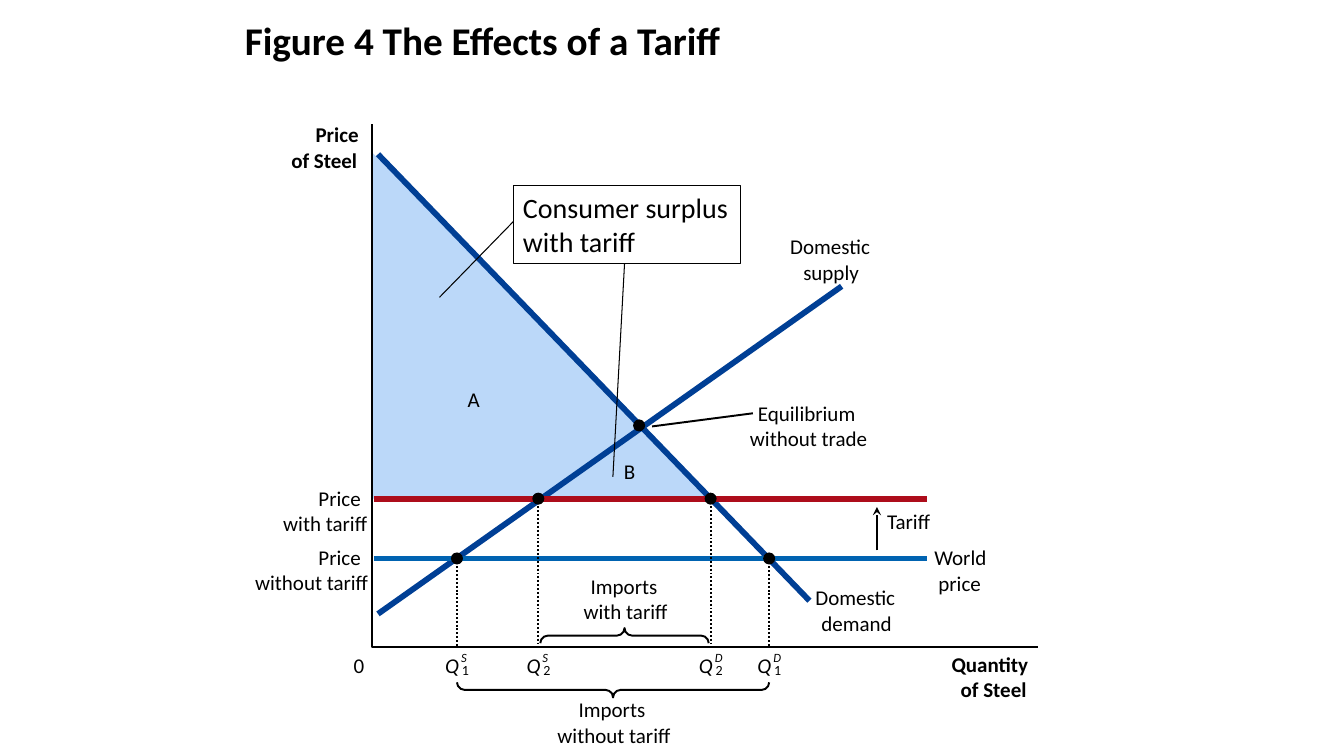
import dataclasses

import lxml.etree
import pptx
import pptx.dml.color
import pptx.enum.dml
import pptx.enum.shapes
import pptx.enum.text
import pptx.oxml.ns
import pptx.util

Pt = pptx.util.Pt
SHAPES = pptx.enum.shapes.MSO_SHAPE


@dataclasses.dataclass(frozen=True)
class Theme:
    """Colours, type sizes and line widths of the page."""

    font: str = "Calibri"
    ink: str = "000000"
    paper: str = "FFFFFF"
    surplus: str = "BBD8F9"
    curve: str = "003F95"
    tariff: str = "AD0D1B"
    world: str = "0063B1"
    title: float = 28
    callout: float = 20
    label: float = 15
    subscript: float = 10
    superscript: float = 9
    hairline: float = 0.75
    thin: float = 1.38
    thick: float = 4.13


THEME = Theme()
TARIFF_PRICE, WORLD_PRICE, AXIS_LEVEL = 356.2, 398.9, 462.2
SUPPLY_WORLD, SUPPLY_TARIFF, DEMAND_TARIFF, DEMAND_WORLD = 326.4, 384.5, 507.6, 549.4
EQUILIBRIUM = (456.5, 303.9)
LINE_PITCH = 18.3


def colour(code):
    """Turn a hex code into a colour."""
    return pptx.dml.color.RGBColor.from_string(code)


def style_text(box, size, bold=False, italic=False):
    """Give every run of a box its font."""
    for para in box.text_frame.paragraphs:
        for span in para.runs:
            span.font.name = THEME.font
            span.font.size = Pt(size)
            span.font.bold = bold
            span.font.italic = italic
            span.font.color.rgb = colour(THEME.ink)


def paint(shape, fill=None, width=None):
    """Set the fill and outline of a shape, and drop its shadow."""
    shape.shadow.inherit = False
    if fill:
        shape.fill.solid()
        shape.fill.fore_color.rgb = colour(fill)
    else:
        shape.fill.background()
    if width:
        shape.line.color.rgb = colour(THEME.ink)
        shape.line.width = Pt(width)
    else:
        shape.line.fill.background()


def add_label(page, text, left, top, width, size=THEME.label, **weight):
    """Place one line of text without margins."""
    box = page.shapes.add_textbox(Pt(left), Pt(top), Pt(width), Pt(size * 1.22))
    frame = box.text_frame
    frame.margin_left = frame.margin_right = frame.margin_top = frame.margin_bottom = 0
    frame.word_wrap = False
    frame.text = text
    style_text(box, size, **weight)


def add_stack(page, top, *lines, **weight):
    """Place label lines below one another, each with its own left edge."""
    for row, (text, left, width) in enumerate(lines):
        add_label(page, text, left, top + row * LINE_PITCH, width, **weight)


def add_line(page, start, end, ink=THEME.ink, width=THEME.thin, dotted=False, arrow=False):
    """Draw a straight line, dotted or with an arrowhead if asked."""
    line = page.shapes.add_connector(
        pptx.enum.shapes.MSO_CONNECTOR.STRAIGHT, *(Pt(value) for value in (*start, *end))
    )
    line.line.color.rgb = colour(ink)
    line.line.width = Pt(width)
    if dotted:
        line.line.dash_style = pptx.enum.dml.MSO_LINE.ROUND_DOT
    if arrow:
        head = lxml.etree.SubElement(line.line._get_or_add_ln(), pptx.oxml.ns.qn("a:tailEnd"))
        head.set("type", "stealth")
    lxml.etree.SubElement(line._element.spPr, pptx.oxml.ns.qn("a:effectLst"))


def add_outline(page, points, close=True, **look):
    """Draw a freeform through the given points."""
    first, *rest = [(Pt(x), Pt(y)) for x, y in points]
    builder = page.shapes.build_freeform(*first, scale=1.0)
    builder.add_line_segments(rest, close=close)
    paint(builder.convert_to_shape(), **look)


def add_dot(page, x, y, diameter=8.6):
    """Mark a crossing with a round dot."""
    corner = Pt(x - diameter / 2), Pt(y - diameter / 2)
    dot = page.shapes.add_shape(SHAPES.OVAL, *corner, Pt(diameter), Pt(diameter))
    paint(dot, fill=THEME.ink)


def add_brace(page, kind, left, right, top, depth=10.8):
    """Lay a curly brace across a horizontal span."""
    span = right - left
    brace = page.shapes.add_shape(
        kind, Pt((left + right - depth) / 2), Pt(top + (depth - span) / 2), Pt(depth), Pt(span)
    )
    brace.rotation = 90
    brace.adjustments[0] = 0.5
    paint(brace, width=THEME.thin)


def add_quantity(page, x, price, letter, digit):
    """Drop a dotted line from a dot to the axis and name the quantity."""
    add_line(page, (x, price), (x, AXIS_LEVEL), dotted=True)
    add_dot(page, x, price)
    add_label(page, "Q", x - 8.4, 465.8, 10, italic=True)
    add_label(page, letter, x + 3, 464.4, 5, THEME.superscript, italic=True)
    add_label(page, digit, x + 3.6, 472.2, 5.1, THEME.subscript)


def add_title(page, text):
    """Place the page title."""
    box = page.shapes.add_textbox(Pt(167.8), Pt(4.3), Pt(648), Pt(54))
    box.text_frame.word_wrap = True
    box.text_frame.vertical_anchor = pptx.enum.text.MSO_ANCHOR.MIDDLE
    box.text_frame.text = text
    box.text_frame.paragraphs[0].line_spacing = 0.8
    style_text(box, THEME.title, bold=True)


def add_callout(page, text):
    """Draw the framed callout and its two leaders."""
    add_line(page, (437.8, 340.6), (446.4, 182.9), width=THEME.hairline)
    add_line(page, (369.4, 155.5), (313.9, 212.4), width=THEME.hairline)
    box = page.shapes.add_shape(SHAPES.RECTANGLE, Pt(366.5), Pt(132.5), Pt(162.7), Pt(55.8))
    paint(box, fill=THEME.paper, width=THEME.hairline)
    box.text_frame.word_wrap = False
    box.text_frame.vertical_anchor = pptx.enum.text.MSO_ANCHOR.TOP
    box.text_frame.text = text
    for para in box.text_frame.paragraphs:
        para.alignment = pptx.enum.text.PP_ALIGN.LEFT
    style_text(box, THEME.callout)


def add_surplus(page):
    """Shade areas A and B."""
    supply_end, demand_end = (SUPPLY_TARIFF, TARIFF_PRICE), (DEMAND_TARIFF, TARIFF_PRICE)
    area_a = [EQUILIBRIUM, supply_end, (266.4, TARIFF_PRICE), (265.7, 108.7)]
    for area in (area_a, [supply_end, demand_end, EQUILIBRIUM]):
        add_outline(page, area, fill=THEME.surplus)
    add_label(page, "A", 334.1, 275.8, 8.6)
    add_label(page, "B", 445.7, 327.6, 8)


def add_curves(page):
    """Draw the axes, both curves and both price lines."""
    axes = [(265.7, 88.6), (265.7, AXIS_LEVEL), (741.6, AXIS_LEVEL)]
    add_outline(page, axes, close=False, width=THEME.thin)
    for start, end, ink in (
        ((270, 438.5), (601.2, 204.5), THEME.curve),
        ((270, 110.2), (578.2, 429.1), THEME.curve),
        ((267.1, TARIFF_PRICE), (662.4, TARIFF_PRICE), THEME.tariff),
        ((267.1, WORLD_PRICE), (662.4, WORLD_PRICE), THEME.world),
    ):
        add_line(page, start, end, ink, THEME.thick)


def add_names(page):
    """Name the axes, curves, prices and imports."""
    add_stack(page, 87, ("Price", 225.4, 31), ("of Steel", 208.1, 47.5), bold=True)
    add_stack(page, 465.3, ("Quantity", 679.7, 55.4), ("of Steel", 686.2, 47.5), bold=True)
    add_stack(page, 466, ("0", 252.7, 8))
    add_stack(page, 167, ("Domestic", 564.5, 57.6), ("supply", 573.8, 40.3))
    add_stack(page, 417.8, ("Domestic", 582.5, 57.6), ("demand", 586.8, 50.4))
    add_stack(page, 346.5, ("Price", 227.5, 31), ("with tariff", 202.3, 61.2))
    add_stack(page, 388.8, ("Price", 227.5, 31), ("without tariff", 182.2, 82))
    add_stack(page, 389, ("World", 667.4, 37.4), ("price", 670.3, 31))
    add_stack(page, 363.6, ("Tariff", 633.6, 32.4))
    add_stack(page, 285.8, ("Equilibrium", 541.4, 70.6), ("without trade", 535.7, 85.7))
    add_stack(page, 409.6, ("Imports", 421.9, 49.7), ("with tariff", 416.9, 61.2))
    add_stack(page, 497.7, ("Imports", 413.3, 49.7), ("without tariff", 398.2, 82))


def main():
    """Build the tariff page and save it."""
    deck = pptx.Presentation()
    deck.slide_width, deck.slide_height = Pt(960), Pt(540)
    page = deck.slides.add_slide(deck.slide_layouts[6])
    add_title(page, "Figure 4 The Effects of a Tariff")
    add_surplus(page)
    add_curves(page)
    add_names(page)
    add_line(page, (626.4, 393.1), (626.4, 362.2), arrow=True)
    add_line(page, (465.8, 304.6), (537.8, 295.2))
    add_dot(page, *EQUILIBRIUM)
    add_brace(page, SHAPES.LEFT_BRACE, 385.9, 506.2, 448.6)
    add_brace(page, SHAPES.RIGHT_BRACE, SUPPLY_WORLD, DEMAND_WORLD, 487.4)
    add_quantity(page, SUPPLY_WORLD, WORLD_PRICE, "S", "1")
    add_quantity(page, SUPPLY_TARIFF, TARIFF_PRICE, "S", "2")
    add_quantity(page, DEMAND_TARIFF, TARIFF_PRICE, "D", "2")
    add_quantity(page, DEMAND_WORLD, WORLD_PRICE, "D", "1")
    add_callout(page, "Consumer surplus\nwith tariff")
    deck.save("out.pptx")


if __name__ == "__main__":
    main()
